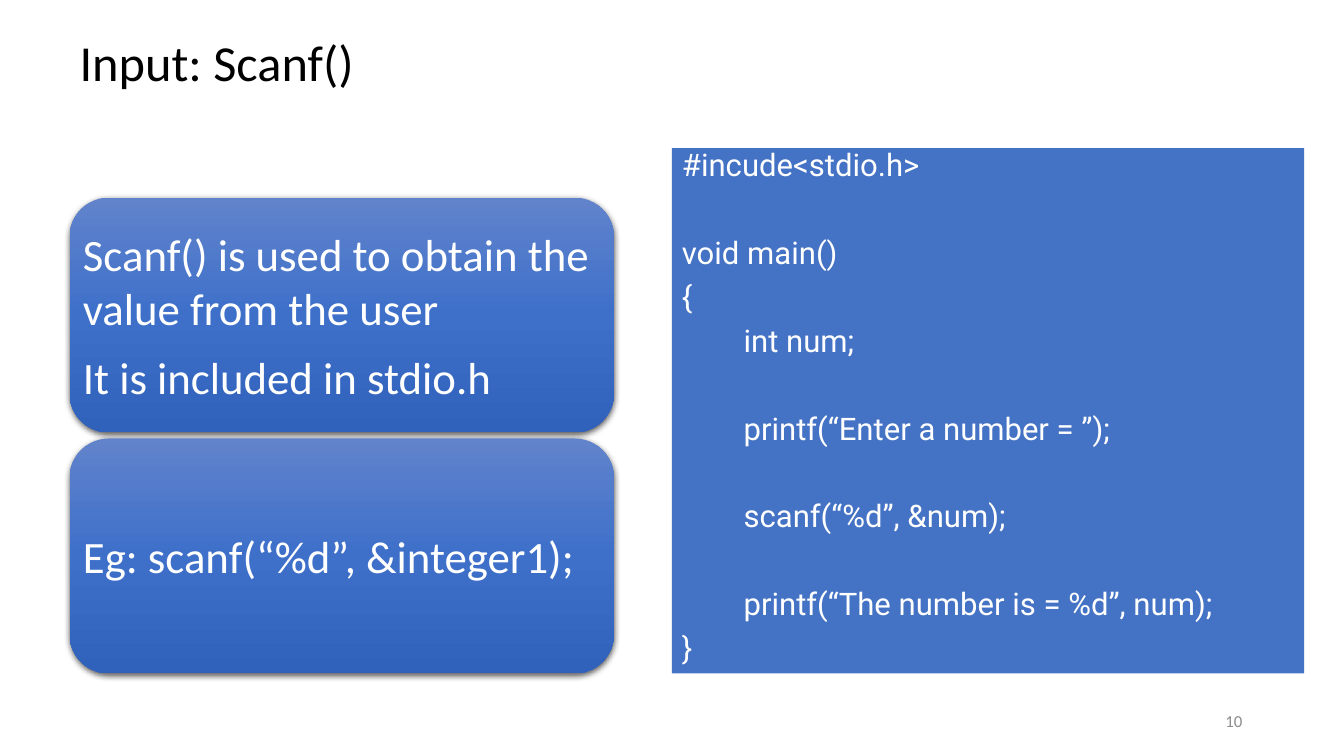
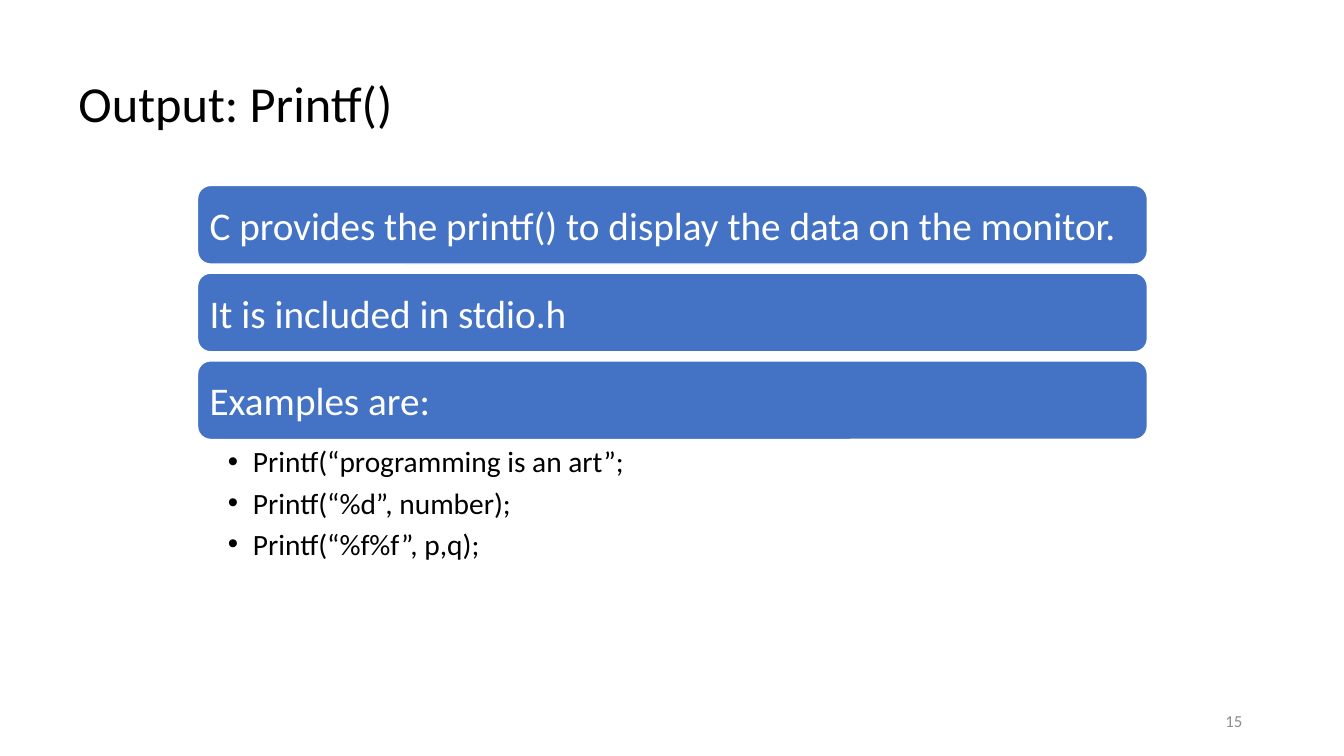
from dataclasses import dataclass

from lxml.etree import SubElement
from pptx import Presentation
from pptx.dml.color import RGBColor
from pptx.enum.shapes import MSO_SHAPE as Preset
from pptx.enum.text import MSO_ANCHOR as Anchor, PP_ALIGN as Align
from pptx.oxml.ns import qn
from pptx.util import Inches, Pt


@dataclass(frozen=True)
class Theme:
    font: str = "Calibri"
    code_font: str = "Roboto"
    black: str = "000000"
    white: str = "FFFFFF"
    grey: str = "8C8C8C"
    blue: str = "4472C4"
    gradient: tuple = ((0, "6183CB"), (50, "3E70CA"), (100, "3062BB"))
    title_size: float = 36
    card_size: float = 32
    bar_size: float = 28
    code_size: float = 22.2
    bullet_size: float = 21
    number_size: float = 12
    inset: float = 7.2      # points, left and right
    thin_inset: float = 3.6  # points, top and bottom


class Deck:
    """Holds the style and the current slide; places are percent of the slide."""

    def __init__(self, theme):
        self.theme = theme
        self.presentation = Presentation()
        self.presentation.slide_width = Inches(13.33)
        self.presentation.slide_height = Inches(7.5)
        self.slide = None

    def place(self, left, top, width, height):
        full_width = self.presentation.slide_width
        full_height = self.presentation.slide_height
        return [round(share * full / 100) for share, full in
                zip((left, top, width, height), (full_width, full_height) * 2)]

    def add_slide(self, title, title_place, number):
        self.slide = self.presentation.slides.add_slide(
            self.presentation.slide_layouts[6])
        self.text(title_place, [title], self.theme.title_size, self.theme.black,
                  anchor=Anchor.BOTTOM, line_spacing=0.9)
        self.text((70.67, 92.67, 22.5, 5.33), [str(number)],
                  self.theme.number_size, self.theme.grey, align=Align.RIGHT)

    # Text
    def set_text(self, shape, lines, size, color, font=None, anchor=Anchor.MIDDLE,
                 align=Align.LEFT, line_spacing=None, before=0, after=0,
                 bullet_indent=None, insets=None):
        frame = shape.text_frame
        frame.word_wrap = True
        frame.vertical_anchor = anchor
        horizontal, vertical = insets or (self.theme.inset, self.theme.thin_inset)
        frame.margin_left = frame.margin_right = Pt(horizontal)
        frame.margin_top = frame.margin_bottom = Pt(vertical)
        frame.text = "\n".join(lines)
        for index, paragraph in enumerate(frame.paragraphs):
            if bullet_indent:
                self.bullet(paragraph, bullet_indent)
            paragraph.alignment = align
            paragraph.line_spacing = line_spacing
            paragraph.space_before = Pt(before if index else 0)
            paragraph.space_after = Pt(after)
            paragraph.font.size = Pt(size)
            paragraph.font.name = font or self.theme.font
            paragraph.font.color.rgb = RGBColor.from_string(color)

    def bullet(self, paragraph, indent):
        properties = paragraph._p.get_or_add_pPr()
        properties.set("marL", str(Pt(indent)))
        properties.set("indent", str(-Pt(indent)))
        SubElement(properties, qn("a:buFont"), typeface="Arial")
        SubElement(properties, qn("a:buChar"), char="•")

    def text(self, place, lines, size, color, **style):
        box = self.slide.shapes.add_textbox(*self.place(*place))
        self.set_text(box, lines, size, color, **style)

    def bullets(self, place, lines):
        size = self.theme.bullet_size
        self.text(place, lines, size, self.theme.black, anchor=Anchor.TOP,
                  after=size * 0.2, bullet_indent=18, insets=(21.6, 2.9))

    # Shapes
    def panel(self, preset, place):
        shape = self.slide.shapes.add_shape(preset, *self.place(*place))
        shape.shadow.inherit = False
        shape.fill.solid()
        shape.fill.fore_color.rgb = RGBColor.from_string(self.theme.blue)
        shape.line.fill.background()
        return shape

    def rounded(self, place, lines, size, inset):
        shape = self.panel(Preset.ROUNDED_RECTANGLE, place)
        # The rounded corner already pushes the text inwards
        corner = 0.29 * shape.adjustments[0] * shape.height.pt
        self.set_text(shape, lines, size, self.theme.white, after=size * 0.35,
                      insets=(inset - corner,) * 2)
        return shape

    def card(self, place, lines):
        shape = self.rounded(place, lines, self.theme.card_size, 9.4)
        shape.fill.gradient()
        shape.fill.gradient_angle = 270
        properties = shape._element.spPr
        stops = properties.find(qn("a:gradFill")).find(qn("a:gsLst"))
        for stop in list(stops):
            stops.remove(stop)
        for position, color in self.theme.gradient:
            stop = SubElement(stops, qn("a:gs"), pos=str(position * 1000))
            SubElement(stop, qn("a:srgbClr"), val=color)
        shadow = SubElement(properties.find(qn("a:effectLst")), qn("a:outerShdw"),
                            blurRad=str(Pt(4.5)), dist=str(Pt(1.5)),
                            dir="5400000", algn="ctr", rotWithShape="0")
        tint = SubElement(shadow, qn("a:srgbClr"), val=self.theme.black)
        SubElement(tint, qn("a:alpha"), val="63000")

    def bar(self, place, line):
        shape = self.rounded(place, [line], self.theme.bar_size, 8.6)
        shape.line.color.rgb = RGBColor.from_string(self.theme.white)
        shape.line.width = Pt(1)

    def code(self, place, listing):
        shape = self.panel(Preset.RECTANGLE, place)
        self.set_text(shape, listing.splitlines(), self.theme.code_size,
                      self.theme.white, font=self.theme.code_font,
                      anchor=Anchor.TOP, line_spacing=0.8, before=10)


SCANF_PROGRAM = """#incude<stdio.h>

void main()
{
        int num;

        printf(“Enter a number = ”);

        scanf(“%d”, &num);

        printf(“The number is = %d”, num);
}"""


def build_input_slide(deck):
    deck.add_slide("Input: Scanf()", (5.18, 0.67, 32.26, 12.27), 10)
    cards = (
        ["Scanf() is used to obtain the value from the user",
         "It is included in stdio.h"],
        ["Eg: scanf(“%d”, &integer1);"],
    )
    for row, lines in enumerate(cards):
        deck.card((5.18, 26.13 + row * 31.87, 40.5, 31.07), lines)
    deck.code((50, 19.6, 47.04, 69.47), SCANF_PROGRAM)


def build_output_slide(deck):
    deck.add_slide("Output: Printf()", (5.1, 5.33, 32.26, 12.93), 15)
    left, top, width, height, pitch = 14.7, 24.53, 70.67, 10.4, 11.6
    bars = ("C provides the printf() to display the data on the monitor.",
            "It is included in stdio.h", "Examples are:")
    for row, line in enumerate(bars):
        deck.bar((left, top + row * pitch, width, height), line)
    deck.bullets((left, top + 2 * pitch + height, width, 17.33),
                 ["Printf(“programming is an art”;", "Printf(“%d”, number);",
                  "Printf(“%f%f”, p,q);"])


def main():
    deck = Deck(Theme())
    build_input_slide(deck)
    build_output_slide(deck)
    deck.presentation.save("out.pptx")


if __name__ == "__main__":
    main()
